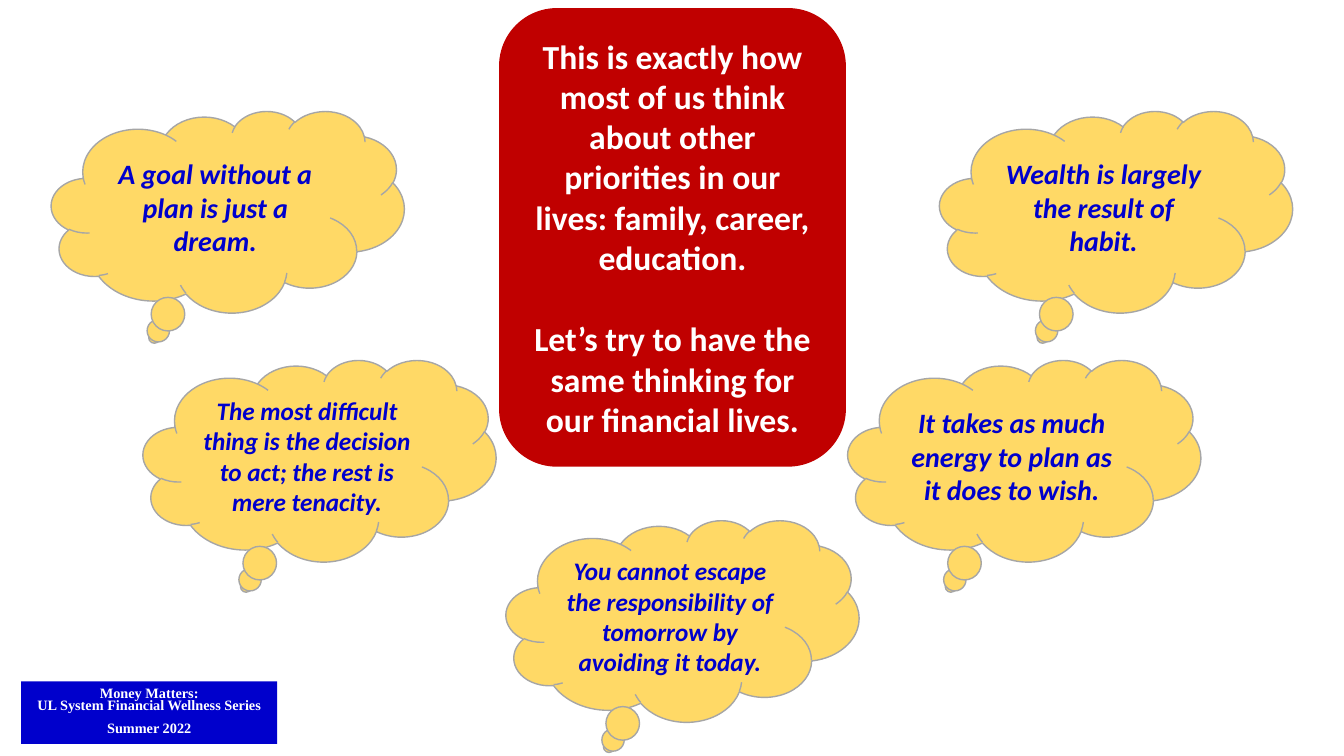
from dataclasses import dataclass

from pptx import Presentation
from pptx import util as u
from pptx.dml.color import RGBColor
from pptx.enum import shapes, text

PX = 9144  # 100 px to the inch
KIND = shapes.MSO_SHAPE


@dataclass(frozen=True)
class Theme:
    white: str = "FFFFFF"
    blue: str = "0000CC"
    red: str = "C00000"
    gold: str = "FFD966"
    grey: str = "A6A6A6"
    sans: str = "Calibri"
    serif: str = "Times New Roman"
    lead: float = 24
    large: float = 20
    small: float = 18
    foot: float = 10.2


THEME = Theme()


@dataclass(frozen=True)
class Style:
    kind: shapes.MSO_SHAPE
    fill: str
    ink: str
    font: str
    line: str = ""
    slant: bool = False
    pitch: float = 1.0
    gap: float = 0  # points above the last paragraph


@dataclass(frozen=True)
class Box:
    left: int
    top: int
    width: int
    height: int
    size: float
    style: Style
    words: tuple[str, ...]


TAG = Style(KIND.RECTANGLE, THEME.blue, THEME.white, THEME.serif, pitch=0.7, gap=8.2)
PANEL = Style(KIND.ROUNDED_RECTANGLE, THEME.red, THEME.white, THEME.sans, gap=29.3)
CLOUD = Style(KIND.CLOUD_CALLOUT, THEME.gold, THEME.blue, THEME.sans,
              line=THEME.grey, slant=True)


def cloud(left: int, top: int, size: float, words: str) -> Box:
    return Box(left, top, 350, 200, size, CLOUD, (words,))


BOXES = (
    Box(21, 676, 254, 62, THEME.foot, TAG,
        ("Money Matters:", "UL System Financial Wellness Series", "Summer 2022")),
    Box(495, 8, 344, 455, THEME.lead, PANEL,
        ("This is exactly how most of us think about other priorities in our "
         "lives: family, career, education.",
         "Let’s try to have the same thinking for our financial lives.")),
    cloud(51, 110, THEME.large, "A goal without a plan is just a dream."),
    cloud(142, 357, THEME.small,
          "The most difficult thing is the decision to act; the rest is mere tenacity."),
    cloud(932, 110, THEME.large, "Wealth is largely the result of habit."),
    cloud(841, 357, THEME.large, "It takes as much energy to plan as it does to wish."),
    cloud(502, 516, THEME.small,
          "You cannot escape the responsibility of tomorrow by avoiding it today."),
)


def tint(code: str) -> RGBColor:
    return RGBColor.from_string(code)


def write(frame, box: Box) -> None:
    style = box.style
    frame.word_wrap = True
    frame.vertical_anchor = text.MSO_ANCHOR.MIDDLE
    frame.text = "\n".join(box.words)
    for para in frame.paragraphs:
        para.alignment = text.PP_ALIGN.CENTER
        para.line_spacing = style.pitch
        for run in para.runs:
            font = run.font
            font.name = style.font
            font.size = u.Pt(box.size)
            font.bold = True
            font.italic = style.slant
            font.color.rgb = tint(style.ink)
    if style.gap:
        frame.paragraphs[-1].space_before = u.Pt(style.gap)


def draw(slide, box: Box) -> None:
    style = box.style
    place = (n * PX for n in (box.left, box.top, box.width, box.height))
    shape = slide.shapes.add_shape(style.kind, *place)
    shape.shadow.inherit = False
    shape.fill.solid()
    shape.fill.fore_color.rgb = tint(style.fill)
    if style.line:
        shape.line.color.rgb = tint(style.line)
        shape.line.width = u.Pt(1)
    else:
        shape.line.fill.background()
    write(shape.text_frame, box)


def main() -> None:
    deck = Presentation()
    deck.slide_width = 1333 * PX
    deck.slide_height = 750 * PX
    slide = deck.slides.add_slide(deck.slide_layouts[6])
    for box in BOXES:
        draw(slide, box)
    deck.save("out.pptx")


if __name__ == "__main__":
    main()
